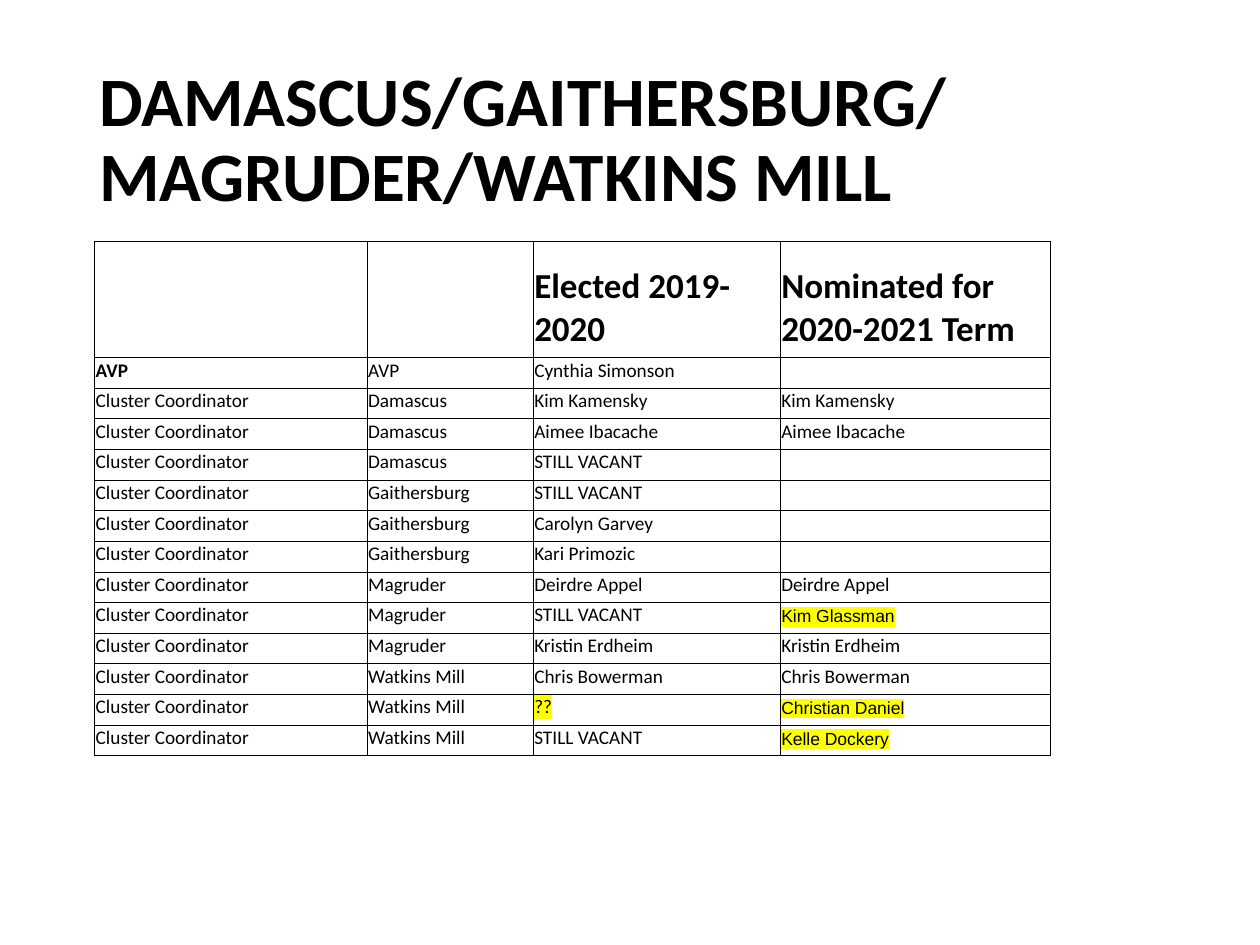
"""Build the cluster coordinator slide with its table of nominees."""
from lxml import etree
from pptx import Presentation
from pptx.dml.color import RGBColor
from pptx.enum.text import MSO_ANCHOR
from pptx.oxml.ns import qn
from pptx.util import Cm, Pt

BLACK = RGBColor(0, 0, 0)
WHITE = RGBColor(255, 255, 255)
YELLOW = RGBColor(255, 255, 0)
MIDDLE = MSO_ANCHOR.MIDDLE
BOTTOM = MSO_ANCHOR.BOTTOM

ROLE = "Cluster Coordinator"
VACANT = "STILL VACANT"
HEADS = ["", "", "Elected 2019-2020", "Nominated for 2020-2021 Term"]
CLUSTERS = {
    "Damascus": [
        ("Kim Kamensky", "Kim Kamensky"),
        ("Aimee Ibacache", "Aimee Ibacache"),
        (VACANT, ""),
    ],
    "Gaithersburg": [
        (VACANT, ""),
        ("Carolyn Garvey", ""),
        ("Kari Primozic", ""),
    ],
    "Magruder": [
        ("Deirdre Appel", "Deirdre Appel"),
        (VACANT, "Kim Glassman"),
        ("Kristin Erdheim", "Kristin Erdheim"),
    ],
    "Watkins Mill": [
        ("Chris Bowerman", "Chris Bowerman"),
        ("??", "Christian Daniel"),
        (VACANT, "Kelle Dockery"),
    ],
}
NEW = {"Kim Glassman", "Christian Daniel", "Kelle Dockery"}
MARKED = NEW | {"??"}
WIDTHS = [5.49, 3.35, 4.98, 5.44]


def style(run, size, bold, face="Calibri"):
    run.font.name = face
    run.font.size = Pt(size)
    run.font.bold = bold
    run.font.color.rgb = BLACK


def add_color(parent, tag, color):
    node = etree.SubElement(parent, qn(tag))
    etree.SubElement(node, qn("a:srgbClr"), val=str(color))
    return node


deck = Presentation()
deck.slide_width = Cm(25.4)
deck.slide_height = Cm(19.05)
slide = deck.slides.add_slide(deck.slide_layouts[6])

title = slide.shapes.add_textbox(Cm(1.75), Cm(1.02), Cm(21.9), Cm(3.68))
frame = title.text_frame
frame.word_wrap = True
frame.vertical_anchor = MIDDLE
frame.text = "DAMASCUS/GAITHERSBURG/\vMAGRUDER/WATKINS MILL"
frame.paragraphs[0].line_spacing = 0.9
for run in frame.paragraphs[0].runs:
    style(run, 39.6, True)

rows = [HEADS, ["AVP", "AVP", "Cynthia Simonson", ""]]
for school, pairs in CLUSTERS.items():
    rows += [[ROLE, school, *pair] for pair in pairs]

table = slide.shapes.add_table(
    len(rows), len(WIDTHS), Cm(1.91), Cm(4.87), Cm(sum(WIDTHS)), Cm(10.27)
).table
table.first_row = False
table.horz_banding = False
for col, width in zip(table.columns, WIDTHS):
    col.width = Cm(width)

for i, row in enumerate(rows):
    table.rows[i].height = Cm(0.61 if i else 2.34)
    for j, text in enumerate(row):
        cell = table.cell(i, j)
        cell.text_frame.text = text
        cell.vertical_anchor = BOTTOM
        cell.margin_left = cell.margin_right = cell.margin_top = Cm(0.02)
        cell.margin_bottom = Cm(0.13)
        props = cell._tc.get_or_add_tcPr()
        for side in ("a:lnL", "a:lnR", "a:lnT", "a:lnB"):
            line = etree.SubElement(props, qn(side), w=str(Pt(0.5)))
            add_color(line, "a:solidFill", BLACK)
        cell.fill.solid()
        cell.fill.fore_color.rgb = WHITE

        para = cell.text_frame.paragraphs[0]
        if not text:
            etree.SubElement(para._p, qn("a:endParaRPr"), sz="1100")
        for run in para.runs:
            if text in NEW:
                style(run, 10, False, "Arial")
            else:
                style(run, 11 if i else 20, i == 0 or (i, j) == (1, 0))
            if text in MARKED:
                font = run._r.get_or_add_rPr()
                mark = add_color(font, "a:highlight", YELLOW)
                font.find(qn("a:solidFill")).addnext(mark)

deck.save("out.pptx")
